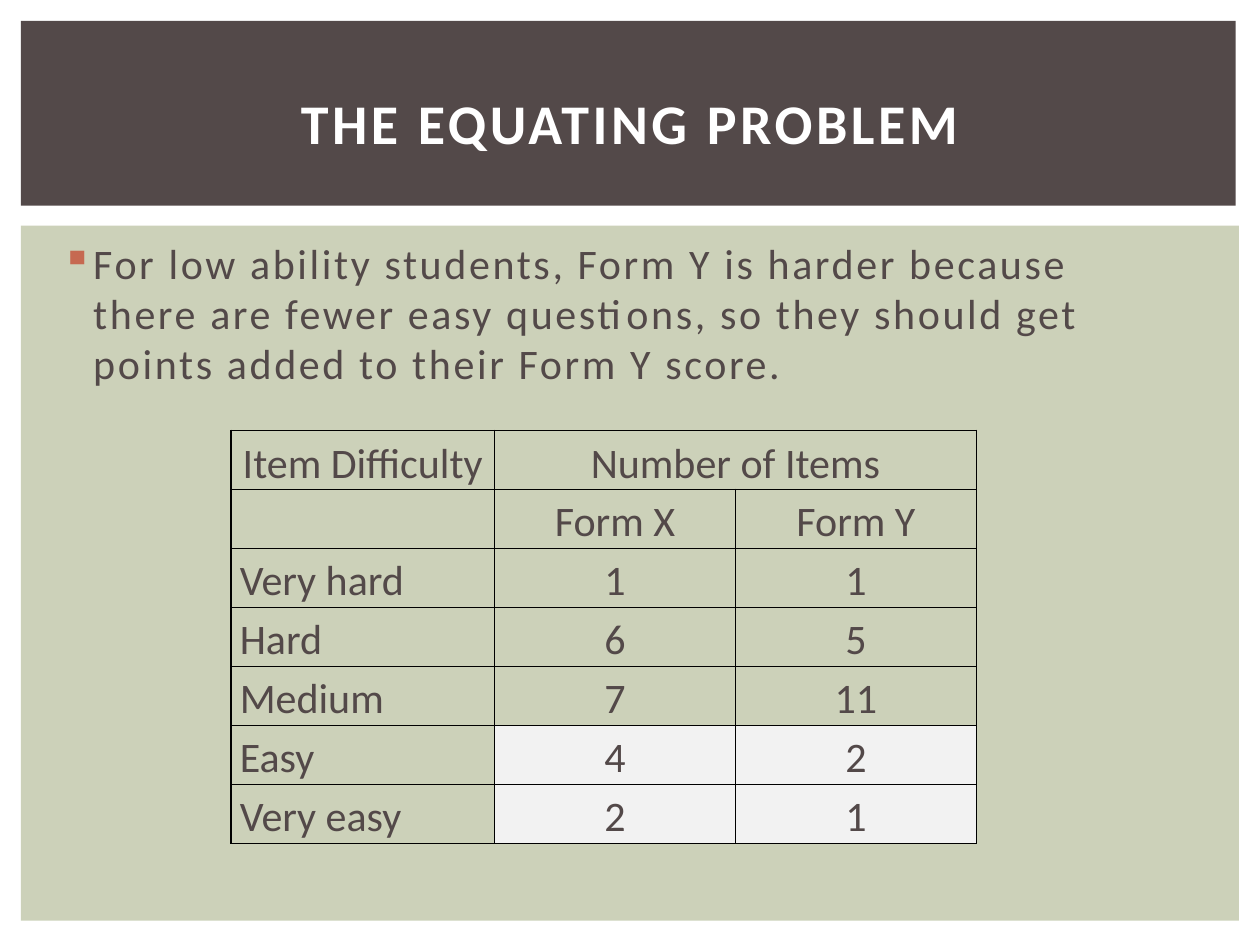
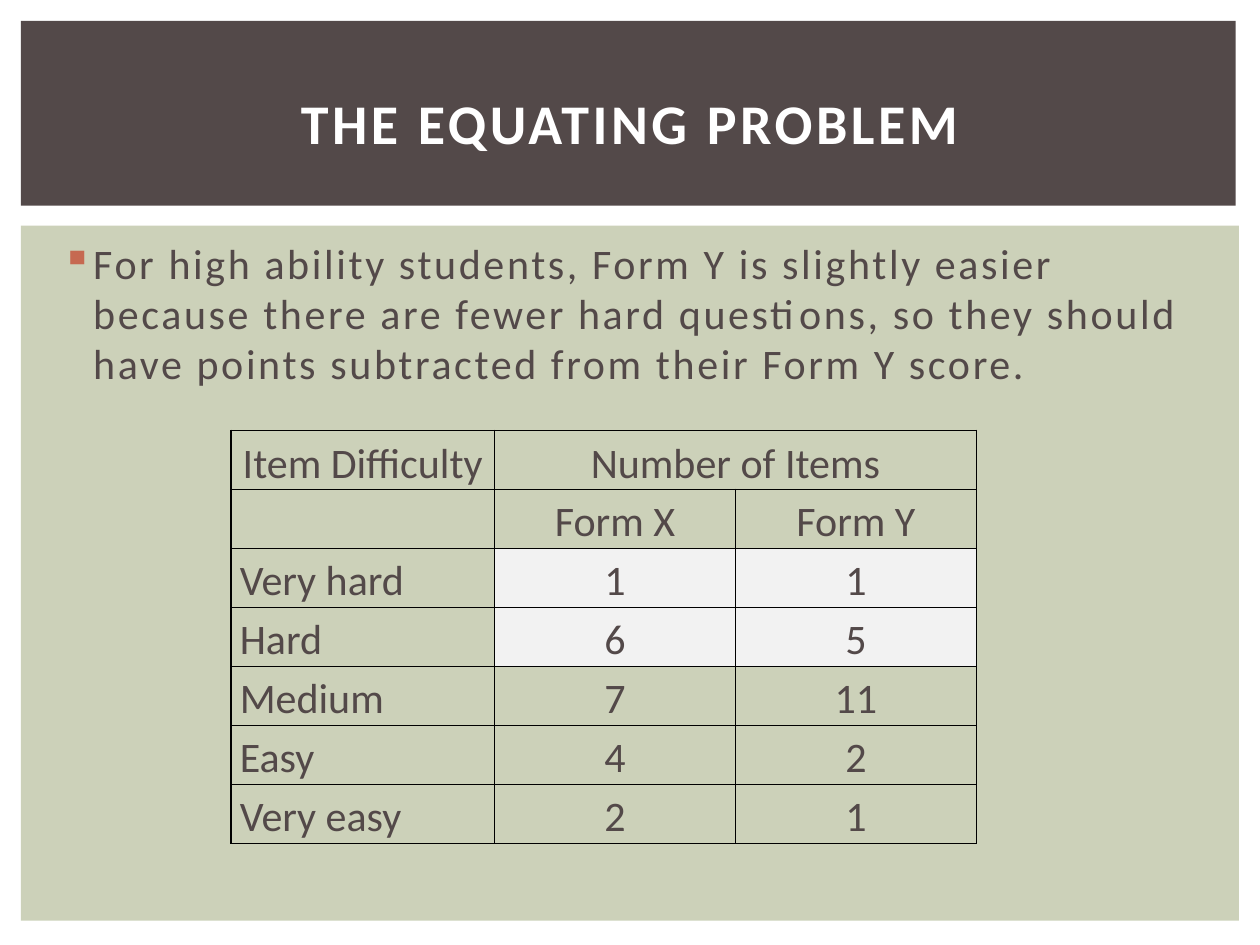
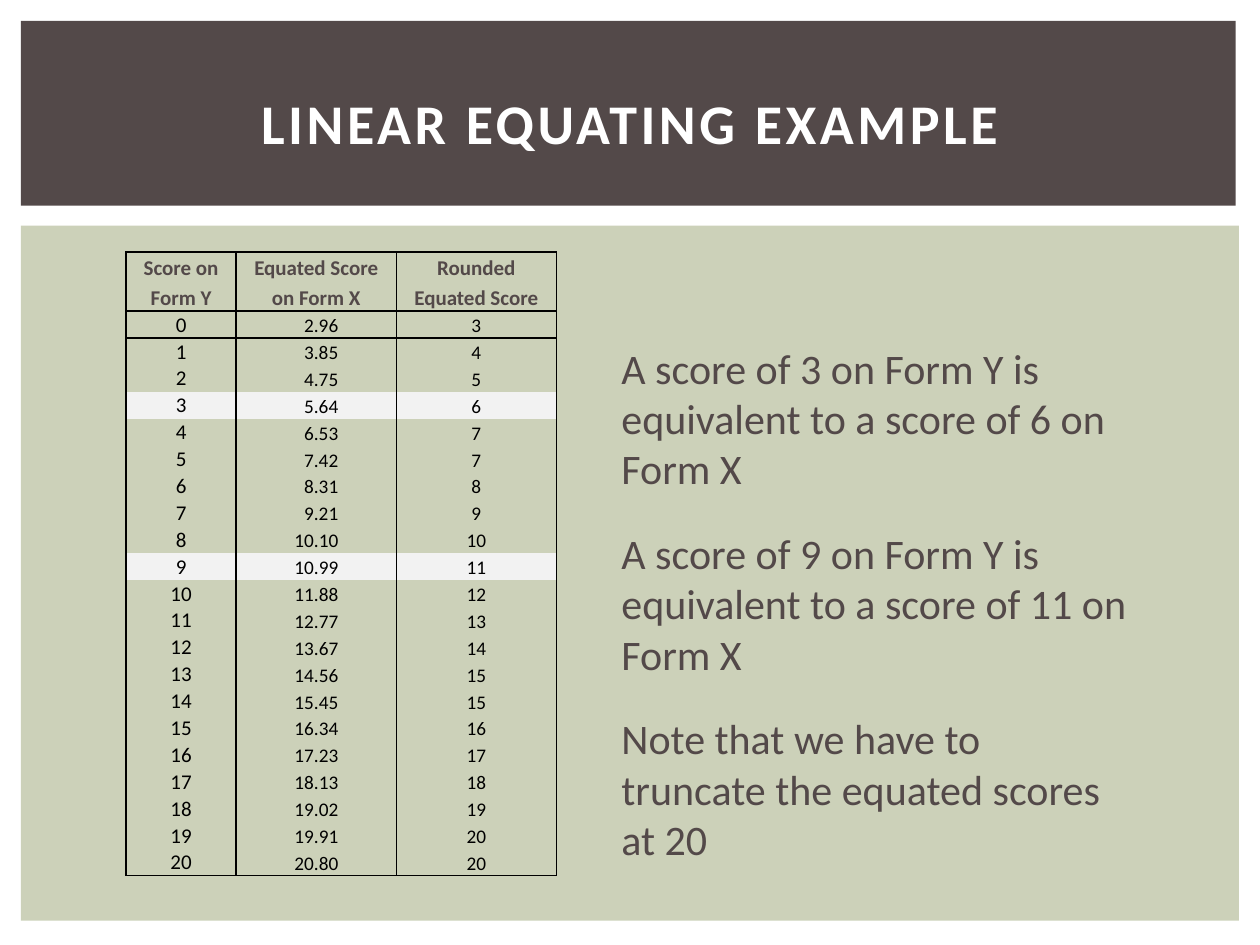
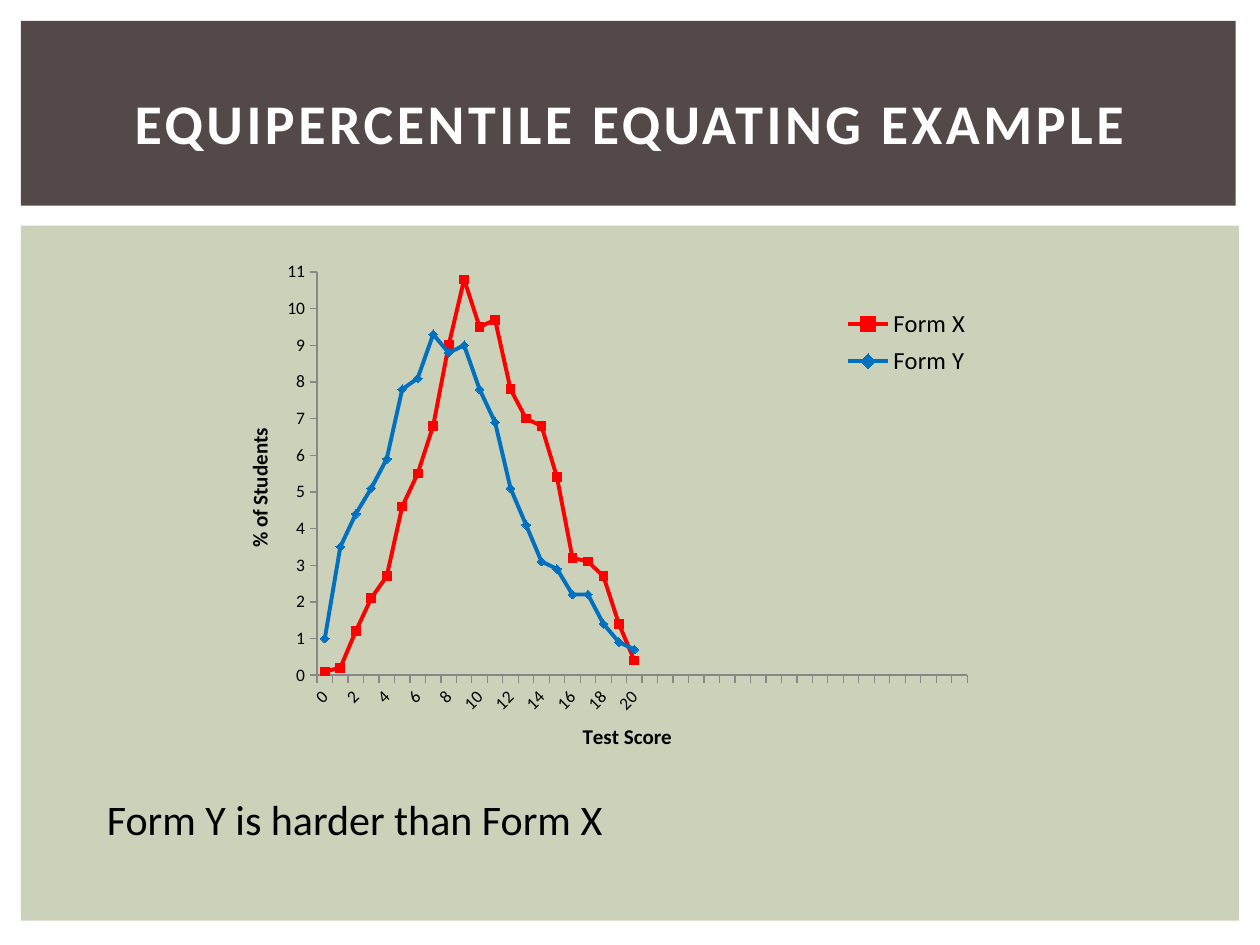
from dataclasses import dataclass

from lxml import etree
from pptx import Presentation
from pptx.chart.data import CategoryChartData
from pptx.dml.color import RGBColor
from pptx.enum.chart import XL_CHART_TYPE, XL_LEGEND_POSITION, XL_TICK_MARK
from pptx.enum.shapes import MSO_SHAPE
from pptx.enum.text import MSO_ANCHOR, MSO_AUTO_SIZE, PP_ALIGN
from pptx.oxml import parse_xml
from pptx.oxml.ns import nsdecls, qn
from pptx.util import Inches, Pt

LEFT, CENTER, RIGHT = PP_ALIGN.LEFT, PP_ALIGN.CENTER, PP_ALIGN.RIGHT
TOP, MIDDLE, BOTTOM = MSO_ANCHOR.TOP, MSO_ANCHOR.MIDDLE, MSO_ANCHOR.BOTTOM
GROW = MSO_AUTO_SIZE.SHAPE_TO_FIT_TEXT
RECT = MSO_SHAPE.RECTANGLE
LINE = XL_CHART_TYPE.LINE
LEGEND_RIGHT = XL_LEGEND_POSITION.RIGHT
OUTSIDE = XL_TICK_MARK.OUTSIDE
TITLE_ONLY = 5
NO_STYLE = "{2D5ABB26-0587-4C30-8999-92F81FD0307C}"
COLS, ROWS = 120, 90


@dataclass(frozen=True)
class Theme:
    font: str = "Calibri"
    dark: str = "534949"
    sage: str = "CCD1B9"
    accent: str = "C66951"
    white: str = "FFFFFF"
    black: str = "000000"
    mark: str = "F2F2F2"
    axis: str = "888888"
    red: str = "FF0000"
    blue: str = "0070C0"
    title: float = 32
    body: float = 24
    legend: float = 14
    head: float = 12
    small: float = 11
    tick: float = 10


class Deck:
    def __init__(self, theme):
        self.theme = theme
        self.prs = Presentation()
        self.prs.slide_width, self.prs.slide_height = Inches(10), Inches(7.5)
        self.layout = self.prs.slide_layouts[TITLE_ONLY]
        self.slide = None

    def x(self, cols):
        return int(self.prs.slide_width * cols / COLS)

    def y(self, rows):
        return int(self.prs.slide_height * rows / ROWS)

    def box(self, left, top, width, height):
        return self.x(left), self.y(top), self.x(width), self.y(height)

    def style(self, font, size, color, bold=False):
        font.name, font.size, font.bold = self.theme.font, Pt(size), bold
        font.color.rgb = RGBColor.from_string(color)

    def space(self, para, points):
        para.font._element.set("spc", str(int(points * 100)))

    def band(self, area, color):
        shape = self.slide.shapes.add_shape(RECT, *self.box(*area))
        shape.shadow.inherit = False
        shape.fill.solid()
        shape.fill.fore_color.rgb = RGBColor.from_string(color)
        shape.line.fill.background()
        self.layout.shapes._spTree.insert(2, shape._element)

    def add(self, title):
        first = self.slide is None
        self.slide = self.prs.slides.add_slide(self.layout)
        if first:
            self.band((2, 2, 115.7, 17.6), self.theme.dark)
            self.band((2, 21.5, 116, 66.2), self.theme.sage)
        shape = self.slide.shapes.title
        shape.left, shape.top, shape.width, shape.height = self.box(5, 4.7, 110, 13.8)
        frame = shape.text_frame
        frame.text, frame.vertical_anchor = title, MIDDLE
        para = frame.paragraphs[0]
        para.alignment = CENTER
        self.style(para.font, self.theme.title, self.theme.white, True)
        self.space(para, 2)

    def text(self, area, words, color):
        frame = self.slide.shapes.add_textbox(*self.box(*area)).text_frame
        frame.word_wrap, frame.text = True, words
        para = frame.paragraphs[0]
        self.style(para.font, self.theme.body, color)
        return frame, para

    def note(self, area, words, color):
        frame, _ = self.text(area, words, color)
        frame.auto_size = GROW

    def bullet(self, words):
        _, para = self.text((4.7, 22, 109, 66), words, self.theme.dark)
        para.space_before = Pt(18)
        self.space(para, 1.5)
        props = para._p.get_or_add_pPr()
        indent = Inches(0.25)
        props.set("marL", str(indent))
        props.set("indent", str(-indent))
        color = (f'<a:buClr {nsdecls("a")}><a:srgbClr val="{self.theme.accent}"/>'
                 '</a:buClr>')
        sign = f'<a:buChar {nsdecls("a")} char="▪"/>'
        for xml in (color, sign):
            props.find(qn("a:defRPr")).addprevious(parse_xml(xml))

    def edge(self, cell, sides):
        props = cell._tc.get_or_add_tcPr()
        lines = [
            parse_xml(f'<a:ln{side} {nsdecls("a")} w="12700"><a:solidFill>'
                      f'<a:srgbClr val="{self.theme.black}"/></a:solidFill></a:ln{side}>')
            for side in "LRTB" if side in sides
        ]
        for spot, line in enumerate(lines):
            props.insert(spot, line)

    def grid(self, left, top, widths, heights):
        area = self.box(left, top, sum(widths), sum(heights))
        table = self.slide.shapes.add_table(len(heights), len(widths), *area).table
        table.first_row = table.horz_banding = False
        table._tbl.tblPr.find(qn("a:tableStyleId")).text = NO_STYLE
        for col, width in zip(table.columns, widths):
            col.width = self.x(width)
        for row, height in zip(table.rows, heights):
            row.height = self.y(height)
        return table

    def cell(self, cell, words, size, color, align=CENTER, anchor=TOP, bold=False,
             lead=None, pad=(0.07, 0, 0.07, 0), lit=False, sides="LRTB"):
        cell.text, cell.vertical_anchor = words, anchor
        (cell.margin_left, cell.margin_top,
         cell.margin_right, cell.margin_bottom) = map(Inches, pad)
        para = cell.text_frame.paragraphs[0]
        para.alignment = align
        if lead:
            para.line_spacing = lead
        self.style(para.font, size, color, bold)
        if lit:
            cell.fill.solid()
            cell.fill.fore_color.rgb = RGBColor.from_string(self.theme.mark)
        else:
            cell.fill.background()
        self.edge(cell, sides)

    def items(self, lit):
        rows = [("Item Difficulty", "Number of Items", ""), ("", "Form X", "Form Y"),
                ("Very hard", "1", "1"), ("Hard", "6", "5"), ("Medium", "7", "11"),
                ("Easy", "4", "2"), ("Very easy", "2", "1")]
        table = self.grid(22, 41, (25.1, 22.95, 22.95), [5.62] * len(rows))
        for r, row in enumerate(rows):
            for c, words in enumerate(row):
                align = LEFT if r > 1 and c == 0 else CENTER
                self.cell(table.cell(r, c), words, self.theme.body, self.theme.dark,
                          align, lead=1.15, lit=c > 0 and row[0] in lit)
        table.cell(0, 1).merge(table.cell(0, 2))

    def scores(self, heads, rows, lit):
        look = self.theme
        table = self.grid(12, 24, (10.5, 15.25, 15.25), [5.62] + [2.56] * len(rows))
        for c, words in enumerate(heads):
            self.cell(table.cell(0, c), words, look.head, look.dark, bold=True, lead=1.15)
        for r, row in enumerate(rows, 1):
            sides = "LR" + "T" * (r == 1) + "B" * (r == len(rows))
            for c, words in enumerate(row):
                size = look.small if c else look.head
                align, right = (RIGHT, 0.46) if c == 1 else (CENTER, 0.01)
                self.cell(table.cell(r, c), words, size, look.black, align, BOTTOM,
                          pad=(0.01, 0.01, right, 0), lit=row[0] in lit, sides=sides)

    def place(self, part, box, inner=False):
        old = part.find(qn("c:layout"))
        if old is not None:
            part.remove(old)
        target = '<c:layoutTarget val="inner"/>' if inner else ""
        modes = "".join(f'<c:{k}Mode val="edge"/>' for k in "xy")
        sizes = "".join(f'<c:{k} val="{v}"/>' for k, v in zip("xywh", box))
        layout = parse_xml(f'<c:layout {nsdecls("c")}><c:manualLayout>{target}{modes}'
                           f'{sizes}</c:manualLayout></c:layout>')
        part.insert(0 if inner else 1, layout)

    def axis(self, axis, title):
        axis.has_major_gridlines = False
        axis.major_tick_mark = OUTSIDE
        axis.format.line.color.rgb = RGBColor.from_string(self.theme.axis)
        axis.has_title = True
        frame = axis.axis_title.text_frame
        frame.text = title
        self.style(frame.paragraphs[0].font, self.theme.head, self.theme.black, True)
        self.style(axis.tick_labels.font, self.theme.tick, self.theme.black)

    def chart(self, area, cats, series):
        look = self.theme
        data = CategoryChartData()
        data.categories = cats
        for name, values, _ in series:
            data.add_series(name, values)
        chart = self.slide.shapes.add_chart(LINE, *self.box(*area), data).chart
        chart.has_title = False
        self.style(chart.font, look.tick, look.black)
        plot = chart.plots[0]
        plot.vary_by_categories = False
        for line, (_, _, color) in zip(plot.series, series):
            line.smooth = False
            line.marker.style = None
            line.format.line.width = Pt(2.25)
            line.format.line.color.rgb = RGBColor.from_string(color)
        score, share = chart.category_axis, chart.value_axis
        self.axis(score, "Test Score")
        self.axis(share, "% of Students")
        share.minimum_scale, share.maximum_scale, share.major_unit = 0, 11, 1
        share.tick_labels.number_format = "0"
        share.tick_labels.number_format_is_linked = False
        score._element.txPr.find(qn("a:bodyPr")).set("rot", "-2700000")
        last = score._element.find(qn("c:noMultiLvlLbl"))
        for tag, step in (("c:tickLblSkip", 2), ("c:tickMarkSkip", 1)):
            skip = etree.Element(qn(tag), val=str(step))
            last.addprevious(skip)
        chart.has_legend = True
        legend = chart.legend
        legend.position, legend.include_in_layout = LEGEND_RIGHT, False
        self.style(legend.font, look.legend, look.black)
        self.place(legend._element, (0.79, 0.1, 0.18, 0.16))
        self.place(chart._chartSpace.chart.plotArea, (0.1, 0.04, 0.86, 0.8), True)


def main():
    look = Theme()
    deck = Deck(look)
    problems = (
        ("For low ability students, Form Y is harder because there are fewer easy "
         "questions, so they should get points added to their Form Y score.",
         ("Easy", "Very easy")),
        ("For high ability students, Form Y is slightly easier because there are fewer "
         "hard questions, so they should have points subtracted from their Form Y score.",
         ("Very hard", "Hard")),
    )
    for words, lit in problems:
        deck.add("THE EQUATING PROBLEM")
        deck.bullet(words)
        deck.items(lit)

    deck.add("LINEAR EQUATING EXAMPLE")
    equated = ("2.96 3.85 4.75 5.64 6.53 7.42 8.31 9.21 10.10 10.99 11.88 12.77 13.67 "
               "14.56 15.45 16.34 17.23 18.13 19.02 19.91 20.80").split()
    rows = [(str(n), value, str(min(20, round(float(value)))))
            for n, value in enumerate(equated)]
    heads = ("Score on Form Y", "Equated Score on Form X", "Rounded Equated Score")
    deck.scores(heads, rows, ("3", "9"))
    notes = ("A score of 3 on Form Y is equivalent to a score of 6 on Form X",
             "A score of 9 on Form Y is equivalent to a score of 11 on Form X",
             "Note that we have to truncate the equated scores at 20")
    for n, words in enumerate(notes):
        deck.note((58, 32 + 17.65 * n, 51, 15.75), words, look.dark)

    deck.add("EQUIPERCENTILE EQUATING EXAMPLE")
    deck.note((9, 75, 80, 6), "Form Y is harder than Form X", look.black)
    form_x = (0.1, 0.2, 1.2, 2.1, 2.7, 4.6, 5.5, 6.8, 9, 10.8, 9.5,
              9.7, 7.8, 7, 6.8, 5.4, 3.2, 3.1, 2.7, 1.4, 0.4)
    form_y = (1, 3.5, 4.4, 5.1, 5.9, 7.8, 8.1, 9.3, 8.8, 9, 7.8,
              6.9, 5.1, 4.1, 3.1, 2.9, 2.2, 2.2, 1.4, 0.9, 0.7)
    cats = [str(n) for n in range(22)] + [""] * 20
    deck.chart((23, 24, 72, 48), cats,
               (("Form X", form_x, look.red), ("Form Y", form_y, look.blue)))
    deck.prs.save("out.pptx")


if __name__ == "__main__":
    main()
